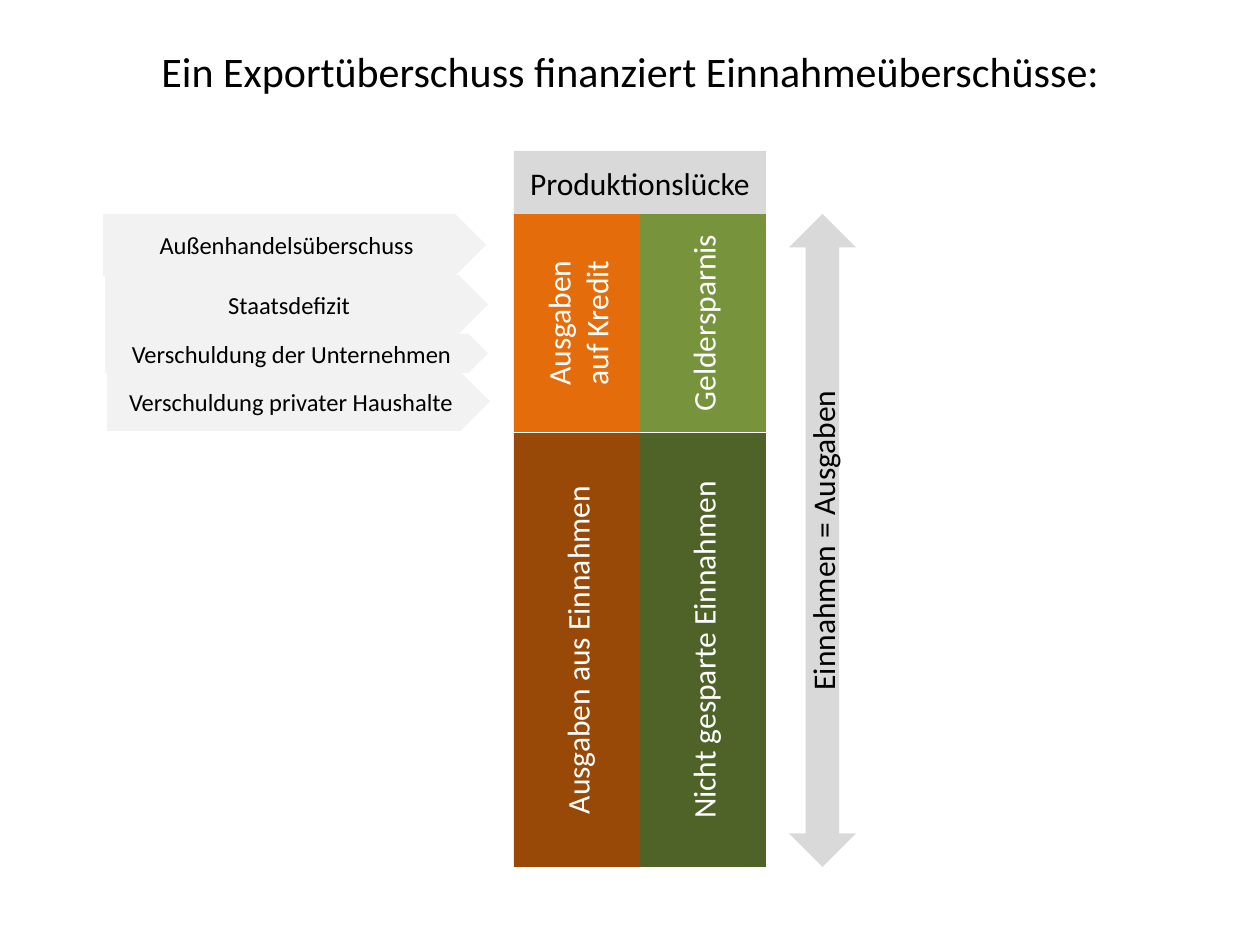
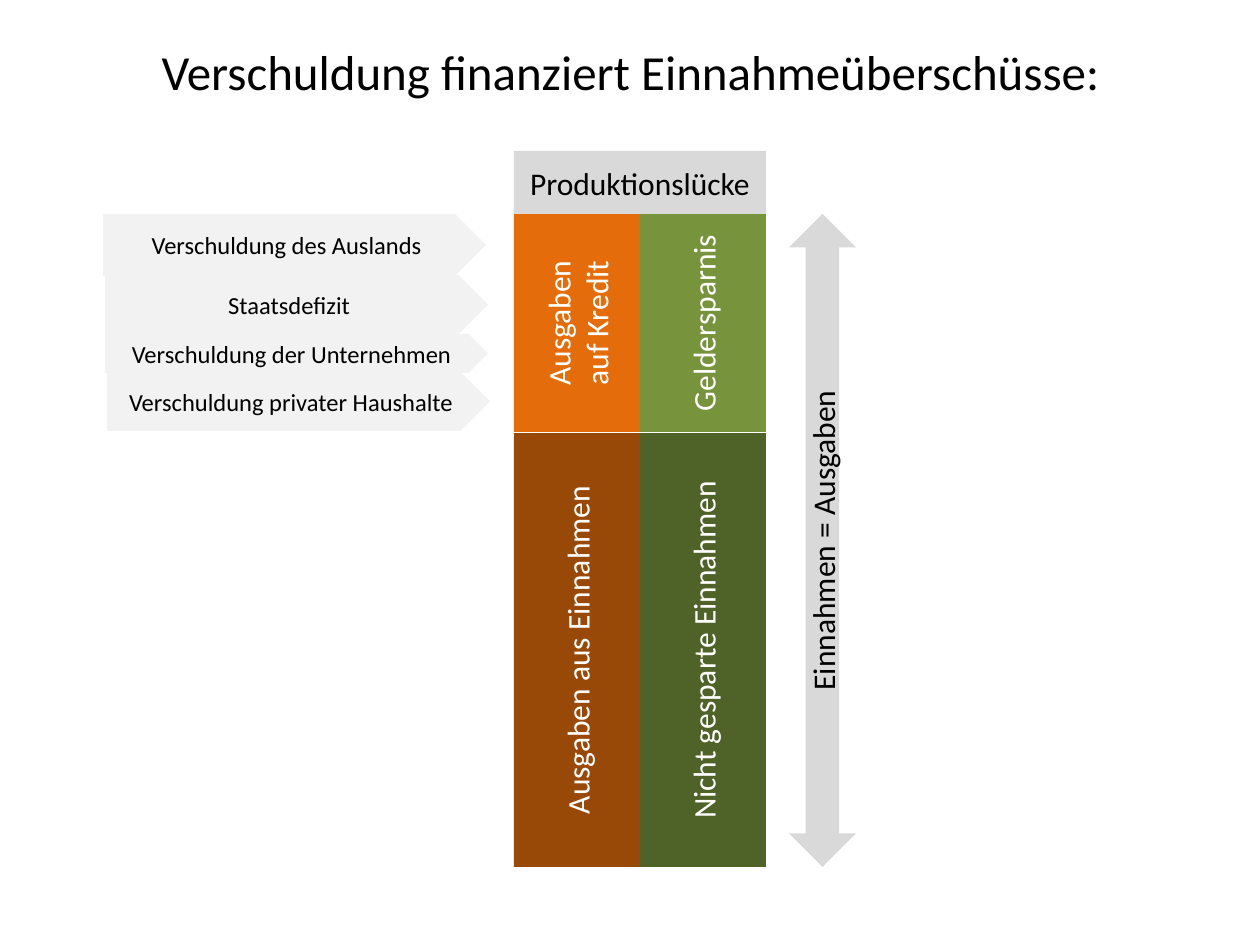
from pptx import Presentation
from pptx.dml.color import RGBColor
from pptx.enum.shapes import MSO_SHAPE
from pptx.enum.text import MSO_ANCHOR, PP_ALIGN
from pptx.util import Emu, Pt

COLORS = {
    "black": "000000", "white": "FFFFFF", "grey": "D9D9D9", "pale": "F2F2F2",
    "orange": "E46C0A", "brown": "984807", "green": "77933C", "forest": "4F6228",
}
FONT = "Calibri"
PX_PER_INCH = 126
COLUMN_LEFT, COLUMN_WIDTH = 514, 126
STACK_TOP, CREDIT_HEIGHT = 214, 218
INCOME_TOP, INCOME_HEIGHT = 433, 434
PLATE_WIDTH = 383

SLIDES = [
    ("Ein Exportüberschuss finanziert Einnahmeüberschüsse:", 24, "Außenhandelsüberschuss"),
    ("Verschuldung finanziert Einnahmeüberschüsse:", 28, "Verschuldung des Auslands"),
]
COLUMNS = [
    ("Ausgaben aus Einnahmen", "brown", "Ausgaben\vauf Kredit", "orange"),
    ("Nicht gesparte Einnahmen", "forest", "Geldersparnis", "green"),
]
DEBT_PLATES = [
    ("Verschuldung privater Haushalte", 107, 372, 59),
    ("Verschuldung der Unternehmen", 105, 334, 39),
    ("Staatsdefizit", 105, 275, 59),
]


def px(length):
    return Emu(round(length * 914400 / PX_PER_INCH))


class SlideBuilder:
    """Draws styled elements on the current slide of a deck."""

    def __init__(self):
        self.deck = Presentation()
        self.deck.slide_width, self.deck.slide_height = px(1260), px(945)
        self.slide = None

    def add_slide(self):
        self.slide = self.deck.slides.add_slide(self.deck.slide_layouts[6])

    def set_text(self, box, text, size, color, upright=False):
        frame = box.text_frame
        frame.word_wrap = True
        frame.vertical_anchor = MSO_ANCHOR.MIDDLE
        if upright:
            box.element.txBody.bodyPr.set("vert", "vert270")
        para = frame.paragraphs[0]
        para.text = text
        para.alignment = PP_ALIGN.CENTER
        for span in para.runs:
            span.font.name = FONT
            span.font.size = Pt(size)
            span.font.color.rgb = RGBColor.from_string(COLORS[color])

    def title(self, text, size):
        box = self.slide.shapes.add_textbox(px(95), px(16), px(1071), px(110))
        self.set_text(box, text, size, "black")

    def block(self, kind, text, area, fill, size=18, color="black", upright=False):
        shape = self.slide.shapes.add_shape(kind, *map(px, area))
        shape.shadow.inherit = False
        shape.fill.solid()
        shape.fill.fore_color.rgb = RGBColor.from_string(COLORS[fill])
        shape.line.fill.background()
        self.set_text(shape, text, size, color, upright)

    def bar(self, text, area, fill):
        self.block(MSO_SHAPE.RECTANGLE, text, area, fill, color="white", upright=True)

    def plate(self, text, left, top, height):
        area = (left, top, PLATE_WIDTH, height)
        self.block(MSO_SHAPE.PENTAGON, text, area, "pale", size=14)


def main():
    builder = SlideBuilder()
    for title, title_size, foreign_text in SLIDES:
        builder.add_slide()
        builder.title(title, title_size)
        for index, (income, income_fill, credit, credit_fill) in enumerate(COLUMNS):
            left = COLUMN_LEFT + index * COLUMN_WIDTH
            builder.bar(income, (left, INCOME_TOP, COLUMN_WIDTH, INCOME_HEIGHT), income_fill)
            builder.bar(credit, (left, STACK_TOP, COLUMN_WIDTH, CREDIT_HEIGHT), credit_fill)
        builder.block(MSO_SHAPE.UP_DOWN_ARROW, "Einnahmen = Ausgaben",
                      (789, STACK_TOP, 67, 653), "grey", upright=True)
        builder.block(MSO_SHAPE.RECTANGLE, "Produktionslücke",
                      (COLUMN_LEFT, 151, 2 * COLUMN_WIDTH, 63), "grey")
        for plate in DEBT_PLATES:
            builder.plate(*plate)
        builder.plate(foreign_text, 103, STACK_TOP, 62)
    builder.deck.save("out.pptx")


if __name__ == "__main__":
    main()
